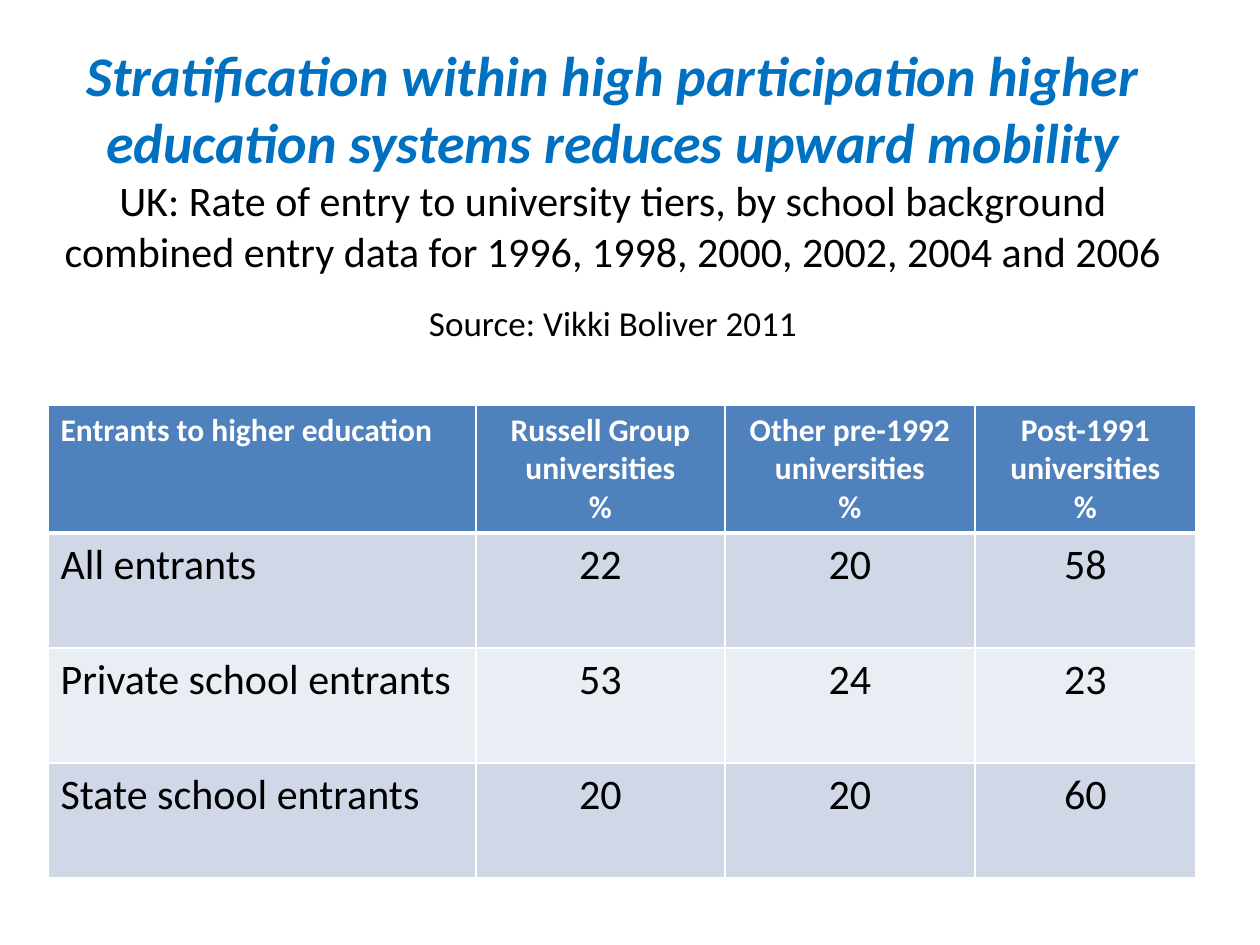
from lxml.etree import SubElement
from pptx import Presentation
from pptx.dml.color import RGBColor
from pptx.enum.text import MSO_ANCHOR, MSO_AUTO_SIZE, PP_ALIGN
from pptx.oxml.ns import qn
from pptx.util import Emu, Pt

EMU_PER_PX = 914400 / 126

BLUE, BLACK, WHITE = "0070C0", "000000", "FFFFFF"
HEADER_FILL = "4F81BD"
BAND_FILLS = ("D0D8E8", "E9EDF4")

HEADING = [
    # text, size, colour, emphasised, space before
    ("Stratification within high participation higher education systems "
     "reduces upward mobility", 32, BLUE, True, 0),
    ("UK: Rate of entry to university tiers, by school background combined "
     "entry data for 1996, 1998, 2000, 2002, 2004 and 2006", 24, BLACK, False, 0),
    ("Source: Vikki Boliver 2011", 20, BLACK, False, 15),
]
ENTRY_RATES = [
    ("Entrants to higher education", "Russell Group universities\n%",
     "Other pre-1992 universities\n%", "Post-1991 universities\n%"),
    ("All entrants", "22", "20", "58"),
    ("Private school entrants", "53", "24", "23"),
    ("State school entrants", "20", "20", "60"),
]
COLUMN_WIDTHS = (428, 249, 250, 221)
ROW_HEIGHTS = (128, 115, 115, 115)


def px(length):
    return Emu(round(length * EMU_PER_PX))


def colour(hex_string):
    return RGBColor.from_string(hex_string)


class SlideBuilder:
    """Holds the font and the slide that is being filled."""

    def __init__(self, slide, font_name):
        self.slide = slide
        self.font_name = font_name

    def style(self, paragraph, size, hex_string, bold, italic=False,
              alignment=PP_ALIGN.CENTER):
        font = paragraph.font
        font.name, font.size = self.font_name, Pt(size)
        font.bold, font.italic = bold, italic
        font.color.rgb = colour(hex_string)
        paragraph.alignment = alignment

    def title(self, left, top, width, height, lines, bottom_margin):
        title = self.slide.shapes.title
        title.left, title.top = px(left), px(top)
        title.width, title.height = px(width), px(height)
        frame = title.text_frame
        frame.auto_size = MSO_AUTO_SIZE.NONE
        frame.word_wrap = True
        frame.vertical_anchor = MSO_ANCHOR.MIDDLE
        frame.margin_bottom = px(bottom_margin)
        frame.text = "\n".join(line[0] for line in lines)
        for paragraph, (_, size, hex_string, emphasis, space) in zip(
                frame.paragraphs, lines):
            self.style(paragraph, size, hex_string, emphasis, emphasis)
            paragraph.space_before = Pt(space)

    def table(self, left, top, widths, heights, rows):
        table = self.slide.shapes.add_table(
            len(rows), len(widths), px(left), px(top),
            px(sum(widths)), px(sum(heights))).table
        for column, width in zip(table.columns, widths):
            column.width = px(width)
        for row, height in zip(table.rows, heights):
            row.height = px(height)
        for row_index, texts in enumerate(rows):
            for column_index, text in enumerate(texts):
                self.cell(table.cell(row_index, column_index), text,
                          row_index, column_index)

    def cell(self, cell, text, row_index, column_index):
        is_header = row_index == 0
        self.borders(cell, top=3 if row_index == 1 else 1,
                     bottom=3 if is_header else 1)
        cell.fill.solid()
        cell.fill.fore_color.rgb = colour(
            HEADER_FILL if is_header else BAND_FILLS[(row_index - 1) % 2])
        cell.text = text
        for paragraph in cell.text_frame.paragraphs:
            self.style(paragraph, 18 if is_header else 24,
                       WHITE if is_header else BLACK, is_header,
                       alignment=PP_ALIGN.CENTER if column_index else PP_ALIGN.LEFT)

    def borders(self, cell, top, bottom):
        """Draw white cell edges; call before filling, as the schema orders them."""
        properties = cell._tc.get_or_add_tcPr()
        for side, width in zip("LRTB", (1, 1, top, bottom)):
            line = SubElement(properties, qn(f"a:ln{side}"), w=str(Pt(width)))
            fill = SubElement(line, qn("a:solidFill"))
            SubElement(fill, qn("a:srgbClr"), val=WHITE)


def main():
    presentation = Presentation()
    presentation.slide_width, presentation.slide_height = px(1260), px(945)
    slide = presentation.slides.add_slide(presentation.slide_layouts[5])
    builder = SlideBuilder(slide, "Calibri")
    builder.title(31, 38, 1164, 340, HEADING, bottom_margin=38)
    builder.table(48, 405, COLUMN_WIDTHS, ROW_HEIGHTS, ENTRY_RATES)
    presentation.save("out.pptx")


if __name__ == "__main__":
    main()
